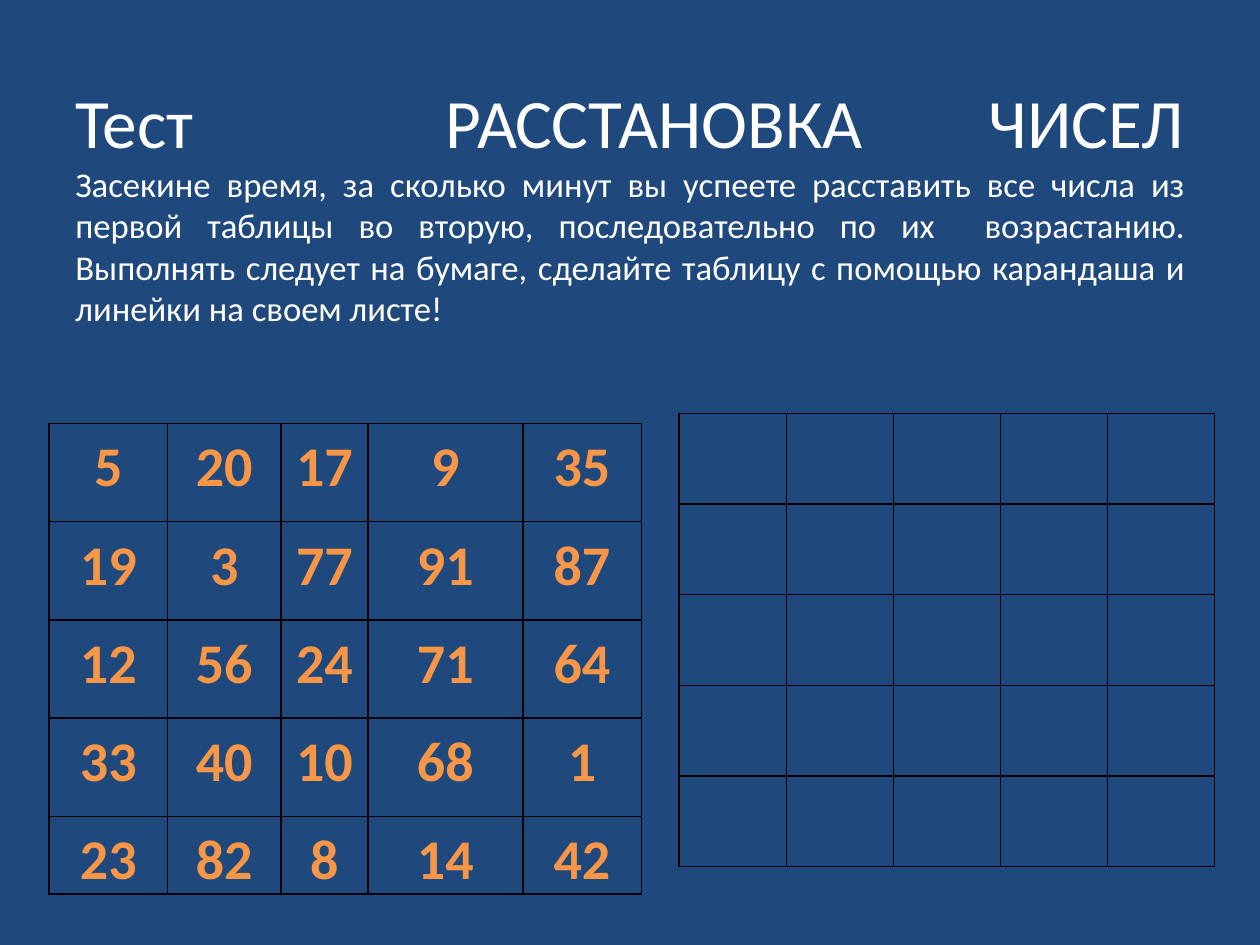
from lxml.etree import SubElement
from pptx import Presentation
from pptx.dml.color import RGBColor
from pptx.enum.text import MSO_ANCHOR, PP_ALIGN
from pptx.oxml.ns import qn
from pptx.util import Inches, Pt

NAVY = RGBColor(0x1F, 0x49, 0x7D)
WHITE = RGBColor(0xFF, 0xFF, 0xFF)
ORANGE = RGBColor(0xF7, 0x96, 0x46)
BLACK = RGBColor(0x00, 0x00, 0x00)


def add_text(p, text, size=18, color=WHITE, bold=False, align=PP_ALIGN.CENTER, spacing=1.0):
    p.alignment = align
    p.line_spacing = spacing
    r = p.add_run()
    r.text = text
    r.font.name = "Calibri"
    r.font.size = Pt(size)
    r.font.bold = bold
    r.font.color.rgb = color


def add_grid(s, left, top, cols, rows):
    shape = s.shapes.add_table(len(rows), len(cols), Inches(left), Inches(top),
                               Inches(sum(cols)), Inches(sum(rows)))
    table = shape.table
    table.first_row = False
    table.horz_banding = False
    for col, width in zip(table.columns, cols):
        col.width = Inches(width)
    for row, height in zip(table.rows, rows):
        row.height = Inches(height)
    for cell in table.iter_cells():
        tcPr = cell._tc.get_or_add_tcPr()
        for side in ("a:lnL", "a:lnR", "a:lnT", "a:lnB"):
            ln = SubElement(tcPr, qn(side), w=str(Pt(1)))
            fill = SubElement(ln, qn("a:solidFill"))
            SubElement(fill, qn("a:srgbClr"), val=str(BLACK))
        cell.fill.background()
    return table


prs = Presentation()
prs.slide_width = Inches(10)
prs.slide_height = Inches(7.5)
s = prs.slides.add_slide(prs.slide_layouts[6])
s.background.fill.solid()
s.background.fill.fore_color.rgb = NAVY

tf = s.shapes.add_textbox(Inches(0.5), Inches(0.58), Inches(9), Inches(2.1)).text_frame
tf.word_wrap = True
tf.vertical_anchor = MSO_ANCHOR.TOP
p = tf.paragraphs[0]
add_text(p, "Тест  РАССТАНОВКА ЧИСЕЛ", size=39.6, align=PP_ALIGN.JUSTIFY)
p.add_line_break()
add_text(p, "Засекине время, за сколько минут вы успеете расставить все числа из первой таблицы "
            "во вторую, последовательно по их  возрастанию. Выполнять следует на бумаге, "
            "сделайте таблицу с помощью карандаша и линейки на своем листе!",
         size=19.8, align=PP_ALIGN.JUSTIFY)

numbers = [
    [5, 20, 17, 9, 35],
    [19, 3, 77, 91, 87],
    [12, 56, 24, 71, 64],
    [33, 40, 10, 68, 1],
    [23, 82, 8, 14, 42],
]
table = add_grid(s, 0.39, 3.36, [0.94, 0.9, 0.69, 1.23, 0.94], [0.78] * 4 + [0.48])
for i, row in enumerate(numbers):
    for j, number in enumerate(row):
        cell = table.cell(i, j)
        cell.margin_left = cell.margin_right = Inches(0.07)
        cell.margin_top = cell.margin_bottom = 0
        add_text(cell.text_frame.paragraphs[0], str(number), size=32, color=ORANGE,
                 bold=True, spacing=1.15)

add_grid(s, 5.39, 3.28, [0.85] * 5, [0.72] * 5)

prs.save("out.pptx")
